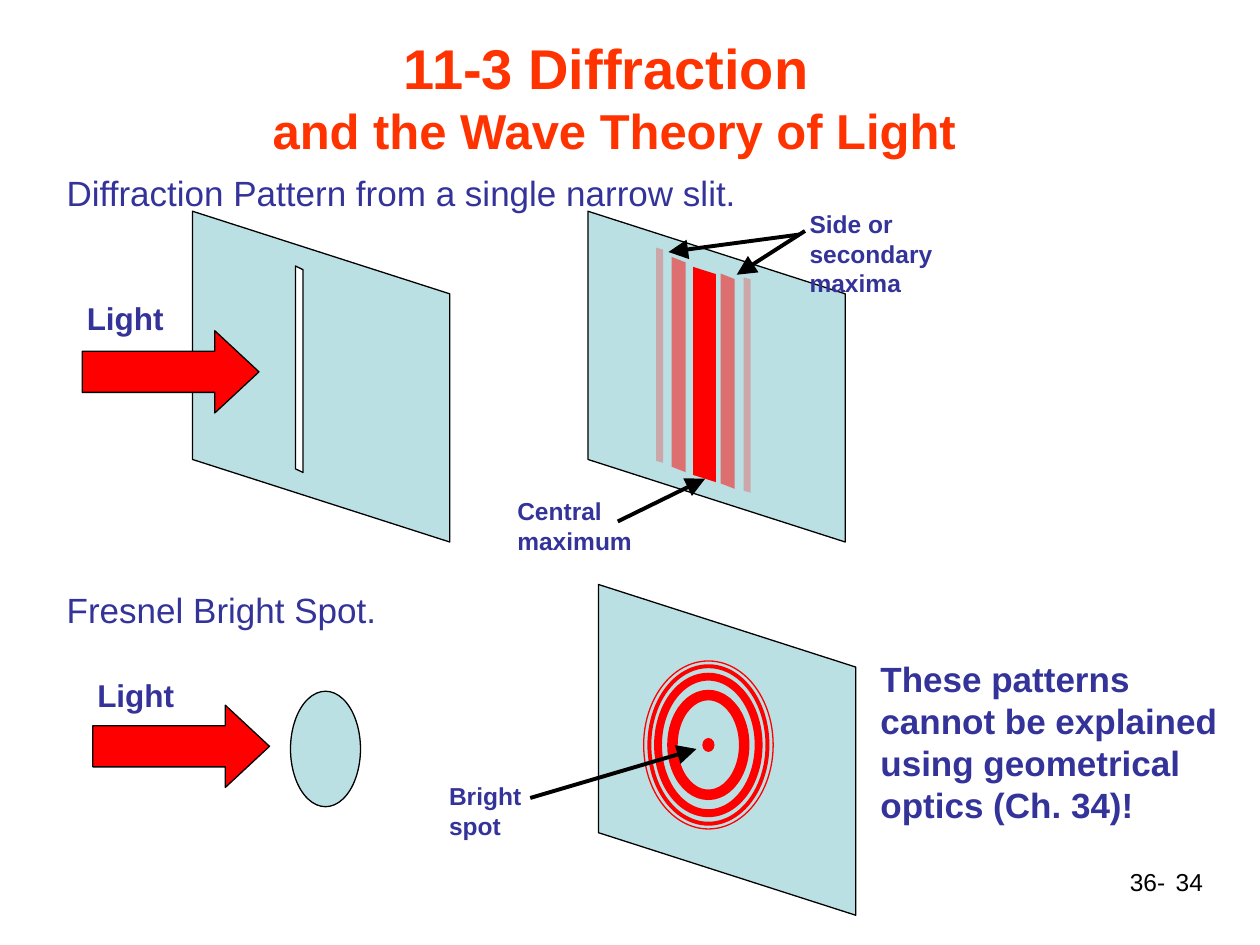
from lxml import etree
from pptx import Presentation
from pptx.dml.color import RGBColor
from pptx.enum.shapes import MSO_CONNECTOR, MSO_SHAPE
from pptx.enum.text import MSO_ANCHOR, PP_ALIGN
from pptx.oxml.ns import qn
from pptx.util import Pt

PARALLELOGRAM = MSO_SHAPE.PARALLELOGRAM
ARROW = MSO_SHAPE.RIGHT_ARROW
OVAL = MSO_SHAPE.OVAL
STRAIGHT = MSO_CONNECTOR.STRAIGHT
MIDDLE = MSO_ANCHOR.MIDDLE
CENTER, LEFT, RIGHT = PP_ALIGN.CENTER, PP_ALIGN.LEFT, PP_ALIGN.RIGHT

FONT = "Arial"
COLORS = {"title": "FF3300", "text": "333399", "screen": "BBE0E3",
          "light": "FF0000", "slit": "FFFFFF", "ink": "000000"}

# Content: lengths in points, shapes given by their centre
TITLE = [("11-3 Diffraction ", 32), ("and the Wave Theory of Light", 28)]
SCREENS = [(183.5, 215.2), (409.5, 215.2), (415.5, 428.5)]
SCREEN_SIZE = (189, 147)
SLIT = (171, 211, 118, 4.4)
# centre x, centre y, thickness, slant, opacity in percent
BANDS = [(402.6, 214, 13, 0.317, 100),
         (415.8, 217.8, 8, 0.39, 50), (387.8, 208.3, 8, 0.39, 50),
         (427, 220, 4, 0.28, 25), (377, 203, 4, 0.28, 25)]
BAND_LENGTH = 123
LIGHT_ARROWS = [(97.5, 212.5), (103.5, 426.5)]
DISK = (186, 428, 40, 66)
RING_CENTER = (404.8, 425.7)
SPOT_SIZE = (7, 8)
RINGS = [(41, 57, 6), (57.5, 78, 4.5), (67.5, 90, 2.25), (74, 96, 0.75)]
POINTERS = [((353, 298), (403, 273.5)), ((460, 132), (421, 157)),
            ((457, 134), (382, 144)), ((303, 456), (398, 428))]
# paragraphs, left, top, width, height, size, bold, wrap, colour, alignment
LABELS = [
    (["Diffraction Pattern from a single narrow slit."],
     31, 94.5, 402, 31, 20, False, True, "text", LEFT),
    (["Fresnel Bright Spot."], 31, 332.5, 245, 31, 20, False, True, "text", LEFT),
    (["Light"], 42.5, 167.5, 62, 29, 18, True, True, "text", LEFT),
    (["Light"], 48.5, 383, 62, 29, 18, True, True, "text", LEFT),
    (["Side or secondary", "maxima"],
     455.5, 116, 95, 58, 14, True, True, "text", LEFT),
    (["Central", "maximum"], 288.5, 280, 84, 41, 14, True, True, "text", LEFT),
    (["Bright", "spot"], 249.5, 443, 60, 41, 14, True, True, "text", LEFT),
    (["These patterns cannot be explained using geometrical optics (Ch. 34)!"],
     496, 372, 212.5, 104.5, 20, True, True, "text", LEFT),
    (["36-"], 638.5, 492, 38, 24, 14, False, True, "ink", LEFT),
    (["34"], 526.5, 492, 168, 37.5, 14, False, True, "ink", RIGHT),
]


def rgb(name):
    return RGBColor.from_string(COLORS[name])


def add_run(p, text, size, bold, color):
    r = p.add_run()
    r.text = text
    r.font.name, r.font.size, r.font.bold = FONT, Pt(size), bold
    r.font.color.rgb = rgb(color)


def add_figure(kind, cx, cy, w, h, fill=None, line=None, width=0.75,
               adj=(), rotation=0, opacity=100):
    sp = s.shapes.add_shape(kind, Pt(cx - w / 2), Pt(cy - h / 2), Pt(w), Pt(h))
    sp.shadow.inherit = False
    sp.rotation = rotation
    for i, value in enumerate(adj):
        sp.adjustments[i] = value
    if fill:
        sp.fill.solid()
        sp.fill.fore_color.rgb = rgb(fill)
    else:
        sp.fill.background()
    if line:
        sp.line.color.rgb = rgb(line)
        sp.line.width = Pt(width)
    else:
        sp.line.fill.background()
    if opacity < 100:
        clr = sp.fill._xPr.find(qn("a:solidFill"))[0]
        etree.SubElement(clr, qn("a:alpha"), val=str(opacity * 1000))


def add_pointer(start, end):
    c = s.shapes.add_connector(STRAIGHT, *map(Pt, start + end))
    c.line.color.rgb = rgb("ink")
    c.line.width = Pt(2.25)
    etree.SubElement(c.line._get_or_add_ln(), qn("a:tailEnd"),
                     type="triangle", w="lg", len="lg")
    etree.SubElement(c._element.spPr, qn("a:effectLst"))


def add_label(lines, x, y, w, h, size, bold, wrap, color, align):
    tf = s.shapes.add_textbox(Pt(x), Pt(y), Pt(w), Pt(h)).text_frame
    tf.word_wrap = wrap
    for i, line in enumerate(lines):
        p = tf.add_paragraph() if i else tf.paragraphs[0]
        p.alignment = align
        add_run(p, line, size, bold, color)


prs = Presentation()
prs.slide_width, prs.slide_height = Pt(720), Pt(540)
s = prs.slides.add_slide(prs.slide_layouts[5])

# Title
title = s.shapes.title
title.left, title.top, title.width, title.height = map(Pt, (42, 21.5, 618, 67))
tf = title.text_frame
tf.vertical_anchor = MIDDLE
p = tf.paragraphs[0]
p.alignment = CENTER
for i, (text, size) in enumerate(TITLE):
    if i:
        p.add_line_break()
    add_run(p, text, size, True, "title")

# Screens, slit and diffraction bands
for center in SCREENS:
    add_figure(PARALLELOGRAM, *center, *SCREEN_SIZE, "screen", "ink",
               adj=[0.321], rotation=270)
add_figure(PARALLELOGRAM, *SLIT, "slit", "ink", adj=[0.483], rotation=270)
for cx, cy, thickness, slant, opacity in BANDS:
    add_figure(PARALLELOGRAM, cx, cy, BAND_LENGTH, thickness, "light",
               adj=[slant], rotation=270, opacity=opacity)

# Incoming light and disk
for center in LIGHT_ARROWS:
    add_figure(ARROW, *center, 101, 47, "light", "ink", adj=[0.5, 0.537])
add_figure(OVAL, *DISK, "screen", "ink")

# Bright spot and rings
add_figure(OVAL, *RING_CENTER, *SPOT_SIZE, "light")
for w, h, width in RINGS:
    add_figure(OVAL, *RING_CENTER, w, h, line="light", width=width)

# Pointers and labels
for start, end in POINTERS:
    add_pointer(start, end)
for label in LABELS:
    add_label(*label)

prs.save("out.pptx")
